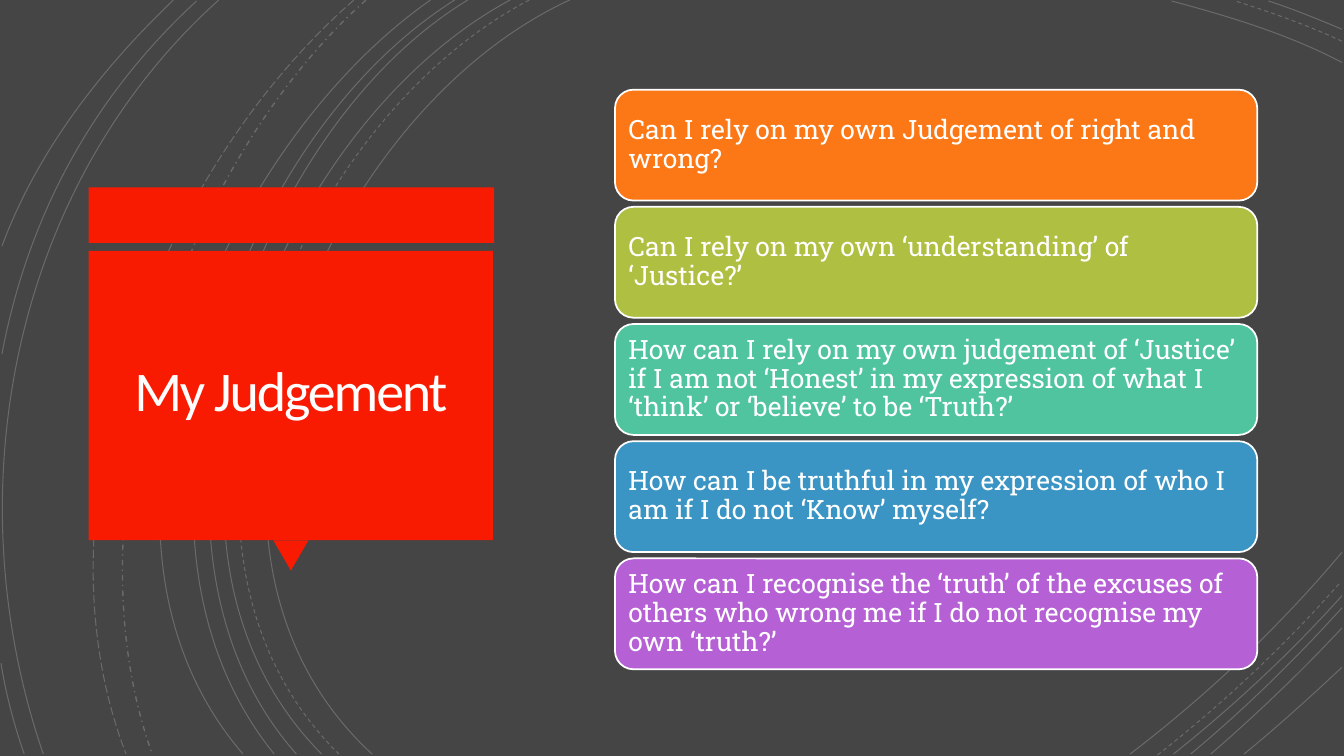
from lxml import etree
from pptx import Presentation
from pptx.dml.color import RGBColor
from pptx.enum.dml import MSO_LINE as DASH
from pptx.enum.shapes import MSO_SHAPE as SHAPE
from pptx.enum.text import MSO_ANCHOR as ANCHOR, PP_ALIGN as ALIGN
from pptx.oxml.ns import qn
from pptx.util import Inches, Pt

COLORS = {
    "back": "454545", "red": "F81B02", "white": "FFFFFF", "title": "FFFEFF",
    "orange": "FC7715", "green": "AFBF41", "teal": "50C49F",
    "blue": "3B95C4", "purple": "B560D4",
}


def add_block(kind, left, top, width, height, fill):
    block = slide.shapes.add_shape(
        kind, Inches(left), Inches(top), Inches(width), Inches(height))
    block.shadow.inherit = False
    block.fill.solid()
    block.fill.fore_color.rgb = RGBColor.from_string(COLORS[fill])
    block.line.fill.background()
    return block


def write(frame, text, font, size, ink, inset, spacing, align):
    """Fill a text frame with one paragraph and return its run."""
    frame.word_wrap = True
    frame.vertical_anchor = ANCHOR.MIDDLE
    frame.margin_left = frame.margin_right = Inches(inset)
    frame.margin_top = frame.margin_bottom = Inches(inset)
    para = frame.paragraphs[0]
    para.alignment = align
    para.line_spacing = spacing
    run = para.add_run()
    run.text = text
    run.font.name, run.font.size = font, Pt(size)
    run.font.color.rgb = RGBColor.from_string(COLORS[ink])
    return run


deck = Presentation()
deck.slide_width, deck.slide_height = Inches(13.33), Inches(7.5)
slide = deck.slides.add_slide(deck.slide_layouts[5])
slide.background.fill.solid()
slide.background.fill.fore_color.rgb = RGBColor.from_string(COLORS["back"])

# Background arcs: four Bezier points, dash, line width
solid, dash = DASH.SOLID, DASH.DASH
arcs = [
    ((5.65, 0), (3.15, 1.15), (1.43, 5.4), (3.69, 7.48), solid, 0.75),
    ((13.31, 0.62), (12.78, 0.34), (12.18, 0.16), (11.62, 0.01), solid, 0.75),
    ((11.21, 7.48), (11.97, 6.9), (12.69, 6.22), (13.31, 5.48), solid, 0.75),
    ((5.25, 0), (2.85, 1.25), (1.23, 5.37), (3.36, 7.48), dash, 0.75),
    ((13.31, 0.41), (12.97, 0.25), (12.6, 0.12), (12.25, 0.01), dash, 0.75),
    ((11.48, 7.49), (12.13, 6.98), (12.75, 6.4), (13.3, 5.77), dash, 0.75),
    ((5.06, 0), (2.7, 1.27), (1.1, 5.37), (3.19, 7.48), solid, 0.75),
    ((13.31, 0.29), (13.07, 0.19), (12.83, 0.09), (12.58, 0.01), solid, 0.75),
    ((11.64, 7.48), (12.23, 7.01), (12.8, 6.48), (13.31, 5.91), solid, 0.75),
    ((4.64, 0), (2.44, 1.33), (1.1, 5.41), (2.94, 7.48), solid, 0.75),
    ((11.81, 7.48), (12.34, 7.04), (12.84, 6.55), (13.31, 6.03), solid, 0.75),
    ((4.51, 0), (2.31, 1.38), (0.97, 5.33), (2.72, 7.48), solid, 0.75),
    ((12.01, 7.48), (12.46, 7.09), (12.9, 6.67), (13.31, 6.23), solid, 0.75),
    ((4.27, 0), (2.17, 1.47), (0.53, 5.29), (2.41, 7.48), solid, 0.75),
    ((12.34, 7.48), (12.67, 7.21), (12.99, 6.92), (13.31, 6.62), solid, 0.75),
    ((3.63, 0), (1.76, 1.66), (0.65, 5.09), (1.51, 7.48), DASH.DASH_DOT, 1),
    ((3.51, 0), (1.57, 1.69), (0.29, 4.99), (1.25, 7.48), DASH.LONG_DASH, 0.75),
    ((2.17, 0), (0.11, 1.85), (-0.46, 4.9), (0.43, 7.48), solid, 0.75),
    ((1.95, 0.01), (0.92, 0.96), (0.28, 2.14), (0.02, 3.51), solid, 0.75),
    ((0.01, 6.58), (0.06, 6.89), (0.14, 7.19), (0.24, 7.48), solid, 0.75),
    ((1.72, 0), (1, 0.69), (0.37, 1.5), (0.02, 2.44), solid, 0.75),
]
for *ends, style, width in arcs:
    points = [(Inches(x), Inches(y)) for x, y in ends]
    pen = slide.shapes.build_freeform(*points[0])
    pen.add_line_segments(points[1:], close=False)
    arc = pen.convert_to_shape()
    # Turn the three straight segments into one cubic curve
    lines = list(arc._element.iter(qn("a:lnTo")))
    curve = etree.SubElement(lines[0].getparent(), qn("a:cubicBezTo"))
    for line in lines:
        curve.append(line[0])
        line.getparent().remove(line)
    arc.shadow.inherit = False
    arc.fill.background()
    arc.line.color.rgb = RGBColor.from_string(COLORS["white"])
    arc.line.width = Pt(width)
    arc.line.dash_style = style
    tint = arc.line._ln.find(".//" + qn("a:srgbClr"))
    etree.SubElement(tint, qn("a:alpha"), val="20000")

# Red title panel with its pointer
add_block(SHAPE.RECTANGLE, 0.88, 1.86, 4.02, 0.55, "red")
add_block(SHAPE.ISOSCELES_TRIANGLE, 2.71, 5.36, 0.35, 0.3, "red").rotation = 180
add_block(SHAPE.RECTANGLE, 0.88, 2.49, 4.01, 2.87, "red")

title = slide.shapes.title
slide.shapes._spTree.append(title._element)  # bring in front of the panel
title.left, title.top = Inches(0.97), Inches(2.57)
title.width, title.height = Inches(3.83), Inches(2.69)
run = write(title.text_frame, "My Judgement", "Calibri", 40, "title",
            0.25, 0.85, ALIGN.CENTER)
run._r.get_or_add_rPr().set("spc", "-150")

# Question cards, evenly spread from the first top to the last
cards = [
    ("orange", "Can I rely on my own Judgement of right and wrong?"),
    ("green", "Can I rely on my own ‘understanding’ of ‘Justice?’"),
    ("teal", "How can I rely on my own judgement of ‘Justice’ if I am not "
             "‘Honest’ in my expression of what I ‘think’ or ‘believe’ to be ‘Truth?’"),
    ("blue", "How can I be truthful in my expression of who I am if I do not "
             "‘Know’ myself?"),
    ("purple", "How can I recognise the ‘truth’ of the excuses of others who "
               "wrong me if I do not recognise my own ‘truth?’"),
]
first, last = 0.89, 5.54
pitch = (last - first) / (len(cards) - 1)
for row, (fill, text) in enumerate(cards):
    card = add_block(SHAPE.ROUNDED_RECTANGLE, 6.1, first + pitch * row, 6.37, 1.1, fill)
    card.line.color.rgb = RGBColor.from_string(COLORS["white"])
    card.line.width = Pt(1.25)
    write(card.text_frame, text, "Roboto Slab", 19, "white", 0.08, 0.9, ALIGN.LEFT)

deck.save("out.pptx")
